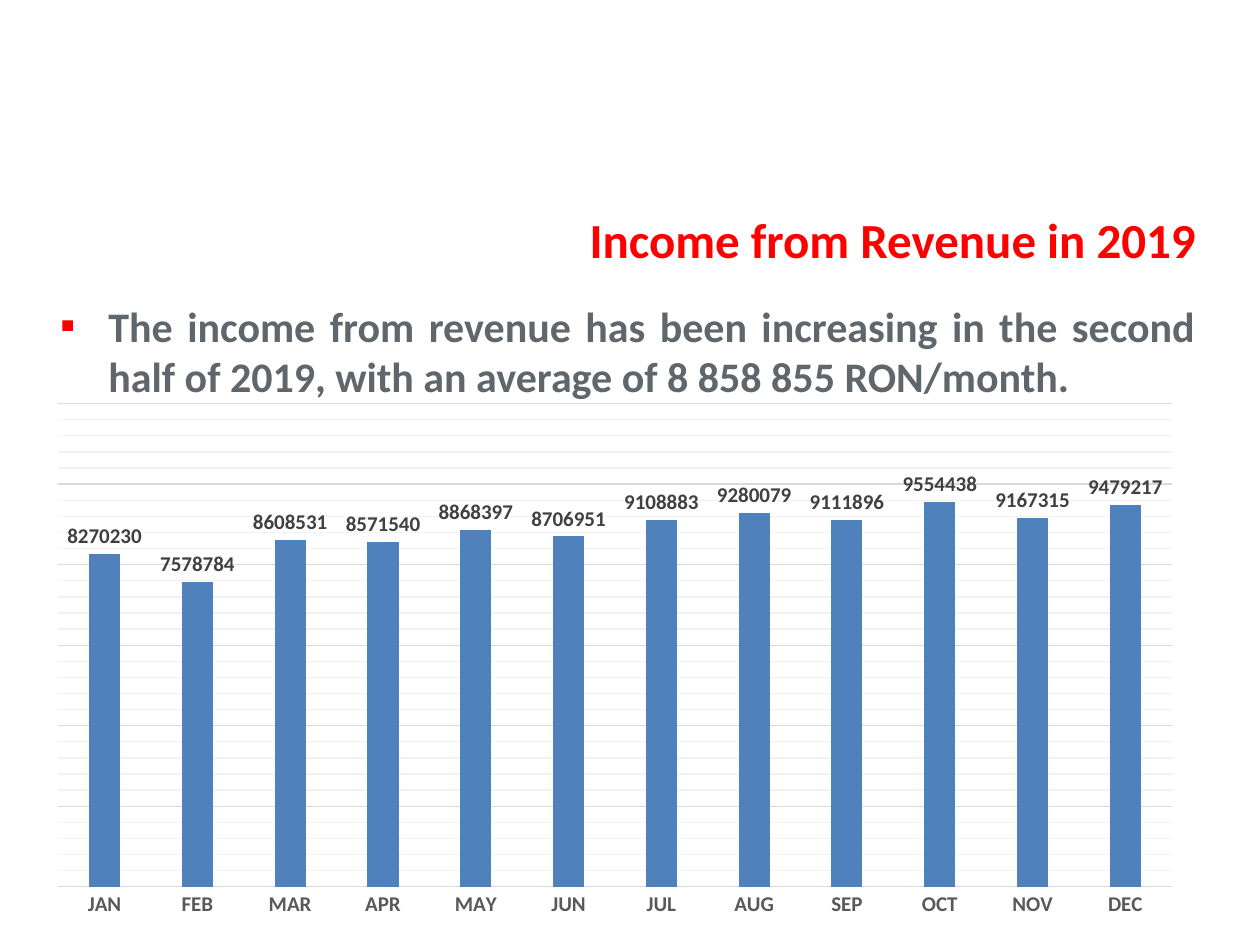
from lxml.etree import SubElement
from pptx import Presentation
from pptx.chart.data import CategoryChartData
from pptx.dml.color import RGBColor
from pptx.enum.chart import XL_CHART_TYPE as ChartType, XL_LABEL_POSITION as LabelPos
from pptx.enum.chart import XL_TICK_LABEL_POSITION as TickPos, XL_TICK_MARK as TickMark
from pptx.enum.text import MSO_ANCHOR, PP_ALIGN
from pptx.oxml.ns import qn
from pptx.util import Emu, Pt

RED = RGBColor(0xFF, 0x00, 0x00)
SLATE = RGBColor(0x5F, 0x66, 0x6C)
BLUE = RGBColor(0x4F, 0x81, 0xBD)
LABEL_GREY = RGBColor(0x40, 0x40, 0x40)
AXIS_GREY = RGBColor(0x59, 0x59, 0x59)
MAJOR_GREY = RGBColor(0xD9, 0xD9, 0xD9)
MINOR_GREY = RGBColor(0xF2, 0xF2, 0xF2)
FONT = "Calibri"
HAIRLINE = Pt(0.75)

MONTHS = "JAN FEB MAR APR MAY JUN JUL AUG SEP OCT NOV DEC".split()
INCOME = [8270230, 7578784, 8608531, 8571540, 8868397, 8706951,
          9108883, 9280079, 9111896, 9554438, 9167315, 9479217]


def px(n):
    return Emu(round(n * 914400 / 126))


def set_font(font, size, color, bold=True):
    for name, value in {"name": FONT, "size": Pt(size), "bold": bold}.items():
        setattr(font, name, value)
    font.color.rgb = color


def set_line(line, color):
    line.color.rgb = color
    line.width = HAIRLINE


def set_minor_gridlines(axis, color):
    axis.has_minor_gridlines = True
    gridlines = axis._element.find(qn("c:minorGridlines"))
    ln = SubElement(SubElement(gridlines, qn("c:spPr")), qn("a:ln"), w=str(HAIRLINE))
    SubElement(SubElement(ln, qn("a:solidFill")), qn("a:srgbClr"), val=str(color))


def add_text(s, box, text, size, color, align, anchor, bullet=None):
    """Add a one-paragraph text box; bullet is (character, colour, indent in px)."""
    tf = s.shapes.add_textbox(*map(px, box)).text_frame
    tf.word_wrap = True
    tf.vertical_anchor = anchor
    p = tf.paragraphs[0]
    p.alignment = align
    if bullet:
        char, bullet_color, indent = bullet
        pPr = p._p.get_or_add_pPr()
        pPr.set("marL", str(px(indent)))
        pPr.set("indent", str(-px(indent)))
        clr = SubElement(pPr, qn("a:buClr"))
        SubElement(clr, qn("a:srgbClr"), val=str(bullet_color))
        SubElement(pPr, qn("a:buFont"), typeface=FONT)
        SubElement(pPr, qn("a:buChar"), char=char)
    r = p.add_run()
    r.text = text
    set_font(r.font, size, color)


def set_plot_layout(chart, **fractions):
    """Fix the inner plot area as fractions of the chart box."""
    plot_area = chart._chartSpace.chart.plotArea
    layout = plot_area.find(qn("c:layout"))
    if layout is None:
        layout = SubElement(plot_area, qn("c:layout"))
        plot_area.insert(0, layout)
    manual = SubElement(layout, qn("c:manualLayout"))
    settings = {"layoutTarget": "inner", "xMode": "edge", "yMode": "edge", **fractions}
    for tag, value in settings.items():
        SubElement(manual, qn(f"c:{tag}"), val=str(value))


def add_income_chart(s, box):
    data = CategoryChartData()
    data.categories = MONTHS
    data.add_series("Series 1", INCOME)
    chart = s.shapes.add_chart(ChartType.COLUMN_CLUSTERED, *map(px, box), data).chart
    chart.has_legend = chart.has_title = False
    set_font(chart.font, 10, RGBColor(0, 0, 0), bold=False)
    set_plot_layout(chart, x=0.02, y=0.02, w=0.96, h=0.9)

    plot = chart.plots[0]
    plot.gap_width = 199
    plot.vary_by_categories = False
    fill = plot.series[0].format.fill
    fill.solid()
    fill.fore_color.rgb = BLUE
    plot.has_data_labels = True
    labels = plot.data_labels
    labels.show_value = True
    labels.position = LabelPos.OUTSIDE_END
    set_font(labels.font, 12, LABEL_GREY)

    months = chart.category_axis
    months.major_tick_mark = months.minor_tick_mark = TickMark.NONE
    set_font(months.tick_labels.font, 12, AXIS_GREY)
    set_line(months.format.line, MAJOR_GREY)

    scale = chart.value_axis
    formats = {"minimum_scale": 0, "maximum_scale": 12_000_000,
               "major_unit": 2_000_000, "minor_unit": 400_000,
               "has_major_gridlines": True,
               "tick_label_position": TickPos.NONE, "visible": False}
    for name, value in formats.items():
        setattr(scale, name, value)
    set_line(scale.major_gridlines.format.line, MAJOR_GREY)
    set_minor_gridlines(scale, MINOR_GREY)


def add_income_slide(prs):
    s = prs.slides.add_slide(prs.slide_layouts[6])
    add_text(s, (74, 203, 1134, 71), "Income from Revenue in 2019",
             28, RED, PP_ALIGN.RIGHT, MSO_ANCHOR.MIDDLE)
    add_income_chart(s, (35, 393, 1160, 537))
    add_text(s, (48, 294, 1160, 118),
             "The income from revenue has been increasing in the second half of 2019, "
             "with an average of 8 858 855 RON/month.",
             24, SLATE, PP_ALIGN.JUSTIFY, MSO_ANCHOR.TOP, bullet=("▪", RED, 48))


def main():
    prs = Presentation()
    prs.slide_width, prs.slide_height = px(1260), px(945)
    add_income_slide(prs)
    prs.save("out.pptx")


if __name__ == "__main__":
    main()
